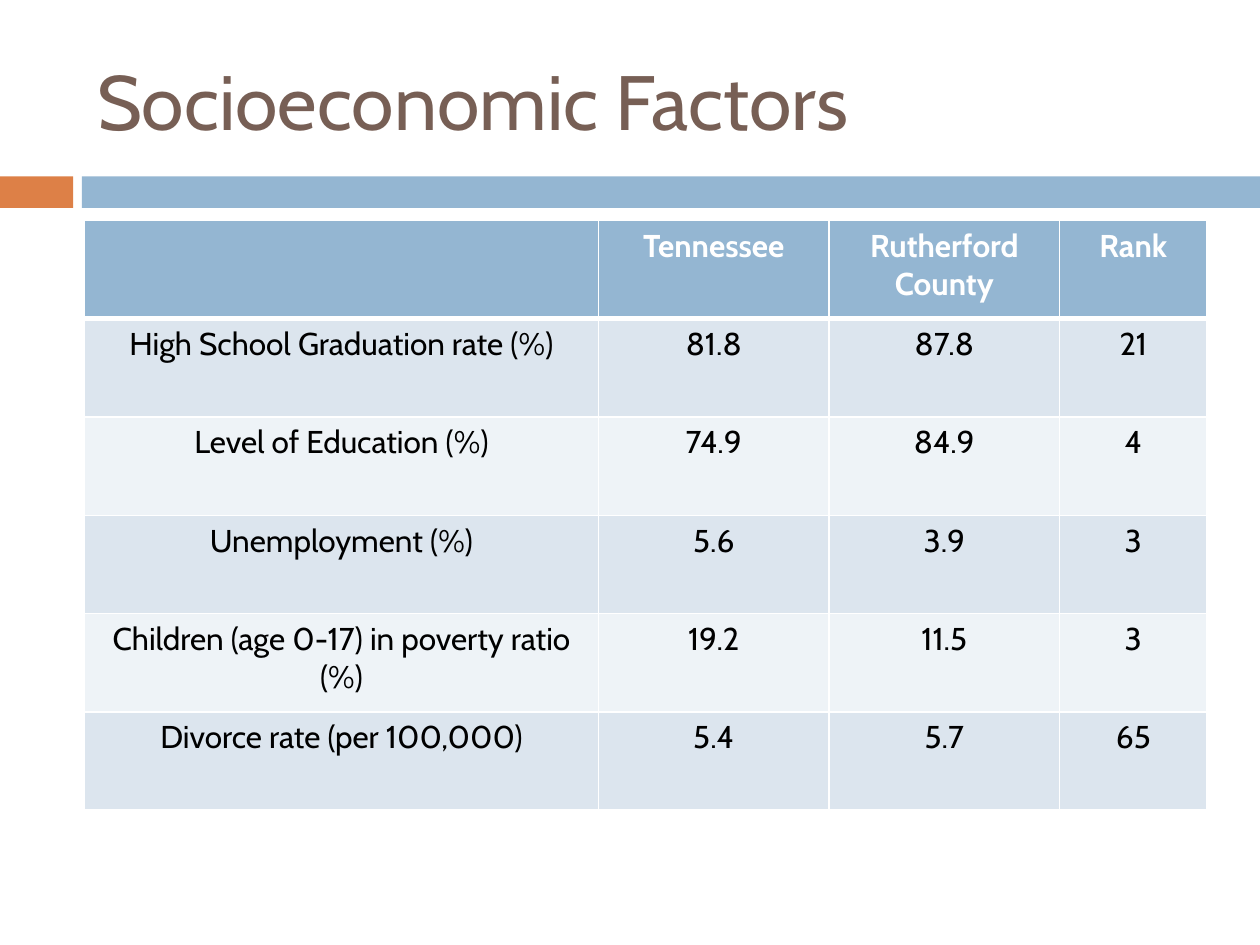
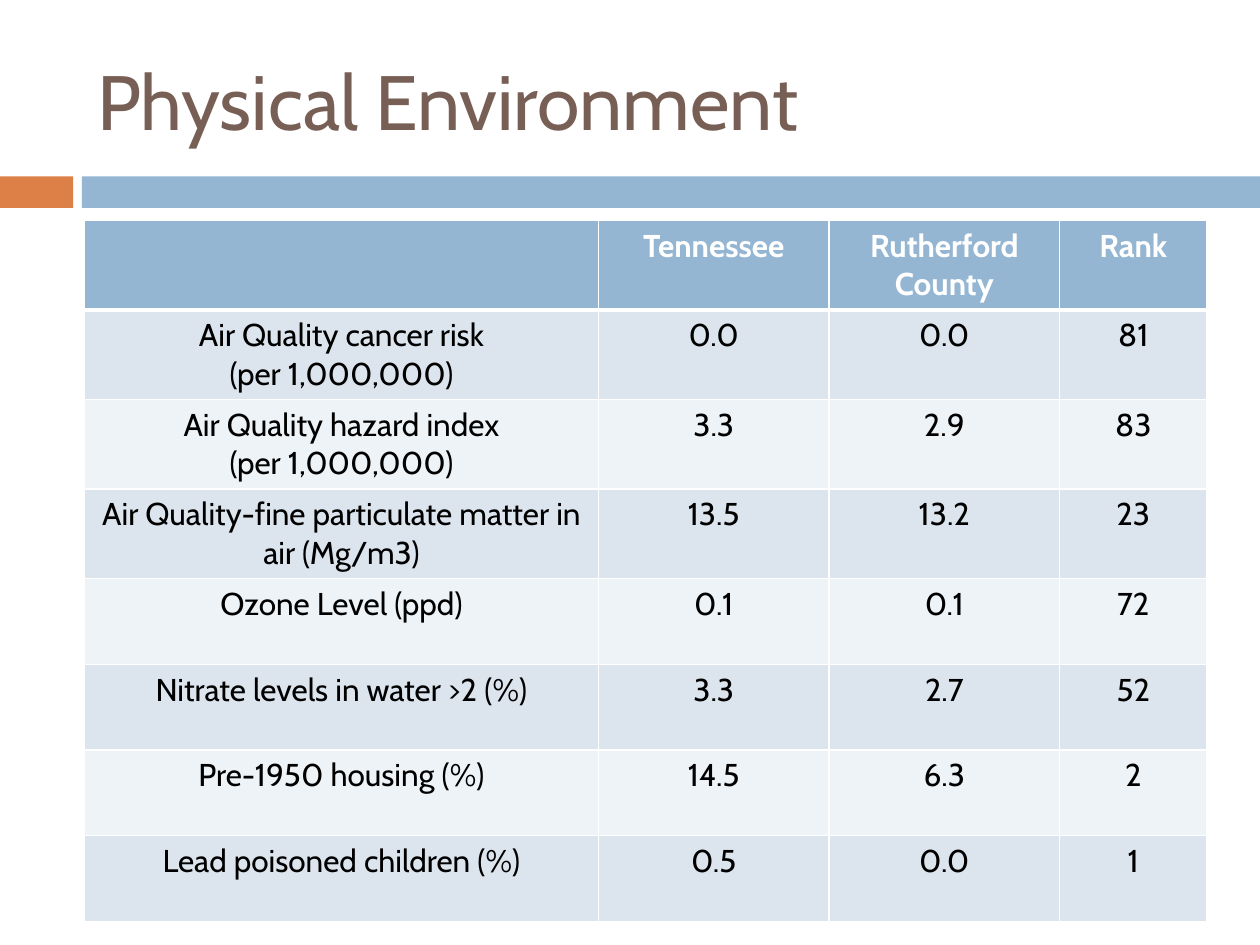
from lxml import etree
from pptx import Presentation
from pptx.dml.color import RGBColor
from pptx.enum.shapes import MSO_SHAPE
from pptx.enum.text import MSO_ANCHOR, PP_ALIGN
from pptx.oxml.ns import qn
from pptx.util import Inches, Pt

RECTANGLE = MSO_SHAPE.RECTANGLE
MIDDLE = MSO_ANCHOR.MIDDLE
LEFT, CENTER = PP_ALIGN.LEFT, PP_ALIGN.CENTER

BROWN = RGBColor(0x77, 0x5F, 0x55)
ORANGE = RGBColor(0xDD, 0x80, 0x47)
BLUE = RGBColor(0x94, 0xB6, 0xD2)
DARK_STRIPE = RGBColor(0xDC, 0xE5, 0xEE)
LIGHT_STRIPE = RGBColor(0xEE, 0xF3, 0xF7)
WHITE = RGBColor(0xFF, 0xFF, 0xFF)
BLACK = RGBColor(0, 0, 0)

FONT = "Cabin"
TITLE_ONLY = 5
TITLE_BOX = (0.67, 0.25, 8.92, 1.08)
BAND_BOX = (0, 1.4, 10, 0.25)
TABLE_CORNER = (0.67, 1.75)
COLUMN_WIDTHS = (4.08, 1.83, 1.83, 1.17)
HEADINGS = ("", "Tennessee", "Rutherford County", "Rank")

SOCIOECONOMIC = [
    ("High School Graduation rate (%)", "81.8", "87.8", "21"),
    ("Level of Education (%)", "74.9", "84.9", "4"),
    ("Unemployment (%)", "5.6", "3.9", "3"),
    ("Children (age 0-17) in poverty ratio (%)", "19.2", "11.5", "3"),
    ("Divorce rate (per 100,000)", "5.4", "5.7", "65"),
]
ENVIRONMENT = [
    ("Air Quality cancer risk\n(per 1,000,000)", "0.0", "0.0", "81"),
    ("Air Quality hazard index\n(per 1,000,000)", "3.3", "2.9", "83"),
    ("Air Quality-fine particulate matter in air (Mg/m3)", "13.5", "13.2", "23"),
    ("Ozone Level (ppd)", "0.1", "0.1", "72"),
    ("Nitrate levels in water >2 (%)", "3.3", "2.7", "52"),
    ("Pre-1950 housing (%)", "14.5", "6.3", "2"),
    ("Lead poisoned children (%)", "0.5", "0.0", "1"),
]


def write_run(paragraph, text, size, color, align, bold=False):
    """Add one formatted run to an aligned paragraph."""
    paragraph.alignment = align
    run = paragraph.add_run()
    run.text = text
    run.font.name = FONT
    run.font.size = Pt(size)
    run.font.bold = bold
    run.font.color.rgb = color


def add_title(slide, box, text):
    """Place the slide title in the given box."""
    title = slide.shapes.title
    title.left, title.top, title.width, title.height = map(Inches, box)
    title.text_frame.vertical_anchor = MIDDLE
    write_run(title.text_frame.paragraphs[0], text, 44, BROWN, LEFT)


def add_bands(slide, box):
    """Draw the short accent band and the long band across the box."""
    left, top, width, height = box
    accent_width, long_offset = 0.58, 0.65
    bands = [(0, accent_width, ORANGE), (long_offset, width - long_offset, BLUE)]
    for offset, band_width, color in bands:
        band = slide.shapes.add_shape(
            RECTANGLE, Inches(left + offset), Inches(top), Inches(band_width), Inches(height))
        band.shadow.inherit = False
        band.fill.solid()
        band.fill.fore_color.rgb = color
        band.line.fill.background()


def set_borders(cell, top_width, bottom_width):
    """Give a cell white borders of the given point widths."""
    properties = cell._tc.get_or_add_tcPr()
    for side, width in (("L", 1), ("R", 1), ("T", top_width), ("B", bottom_width)):
        line = etree.SubElement(properties, qn(f"a:ln{side}"), w=str(Pt(width)))
        fill = etree.SubElement(line, qn("a:solidFill"))
        etree.SubElement(fill, qn("a:srgbClr"), val=str(WHITE))


def fill_cell(cell, text, row_index):
    """Write and style one cell according to its row."""
    is_header = row_index == 0
    set_borders(cell, 3 if row_index == 1 else 1, 3 if is_header else 1)
    cell.fill.solid()
    stripe = DARK_STRIPE if row_index % 2 else LIGHT_STRIPE
    cell.fill.fore_color.rgb = BLUE if is_header else stripe
    if not text:
        return
    frame = cell.text_frame
    for index, line in enumerate(text.split("\n")):
        paragraph = frame.add_paragraph() if index else frame.paragraphs[0]
        write_run(paragraph, line, 18, WHITE if is_header else BLACK, CENTER, is_header)


def add_indicator_table(slide, corner, indicators, row_height):
    """Build the county comparison table from its top left corner."""
    rows = [HEADINGS, *indicators]
    left, top = map(Inches, corner)
    table = slide.shapes.add_table(
        len(rows), len(HEADINGS), left, top,
        Inches(sum(COLUMN_WIDTHS)), Inches(row_height * len(rows))).table
    for column, width in zip(table.columns, COLUMN_WIDTHS):
        column.width = Inches(width)
    for row_index, row in enumerate(rows):
        table.rows[row_index].height = Inches(row_height)
        for column_index, text in enumerate(row):
            fill_cell(table.cell(row_index, column_index), text, row_index)


def add_indicator_slide(deck, title, indicators, row_height):
    """Add a slide with title, bands and comparison table."""
    slide = deck.slides.add_slide(deck.slide_layouts[TITLE_ONLY])
    add_bands(slide, BAND_BOX)
    add_title(slide, TITLE_BOX, title)
    add_indicator_table(slide, TABLE_CORNER, indicators, row_height)


def main():
    """Build and save the deck."""
    deck = Presentation()
    deck.slide_width, deck.slide_height = Inches(10), Inches(7.5)
    add_indicator_slide(deck, "Socioeconomic Factors", SOCIOECONOMIC, 0.78)
    add_indicator_slide(deck, "Physical Environment", ENVIRONMENT, 0.68)
    deck.save("out.pptx")


if __name__ == "__main__":
    main()
